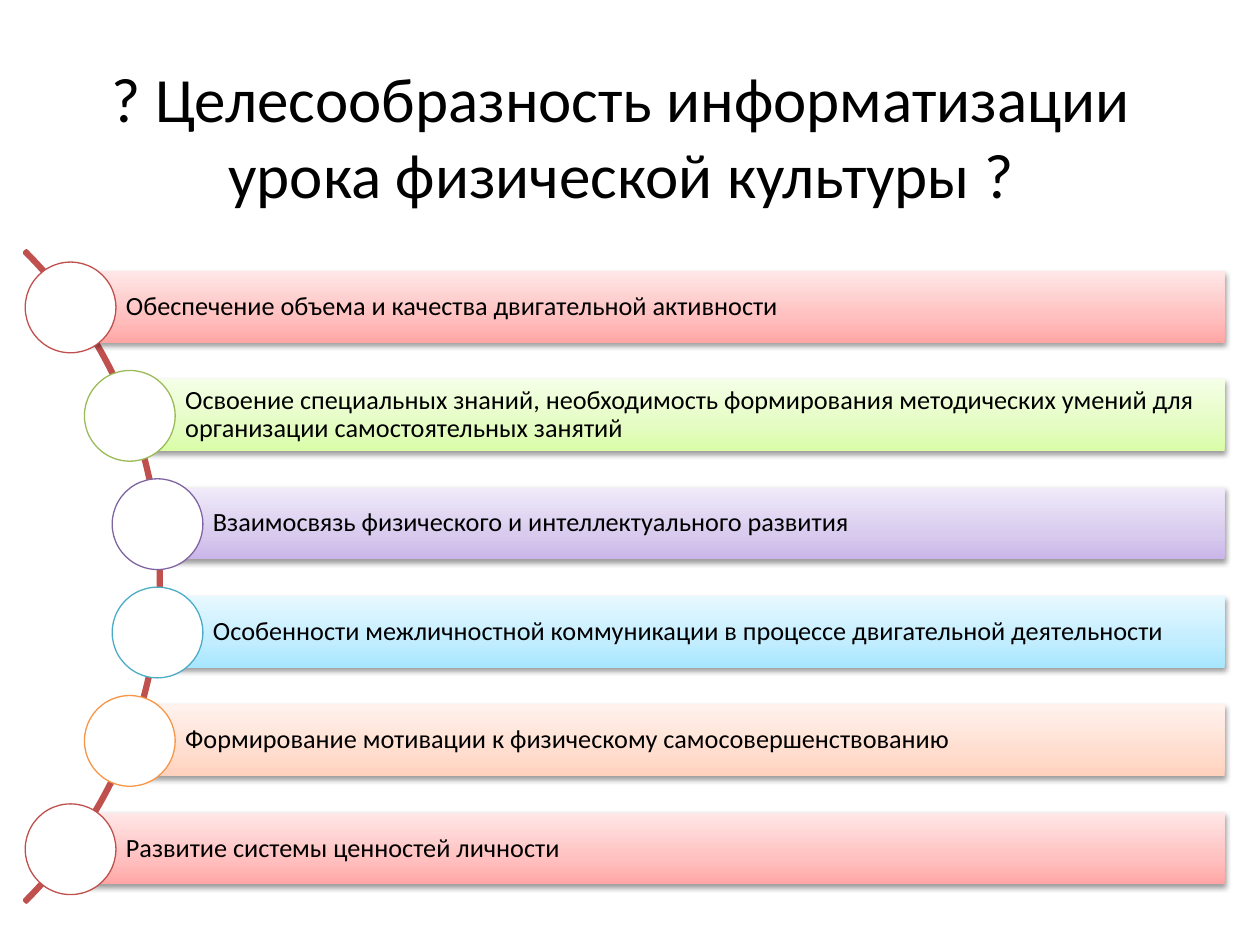
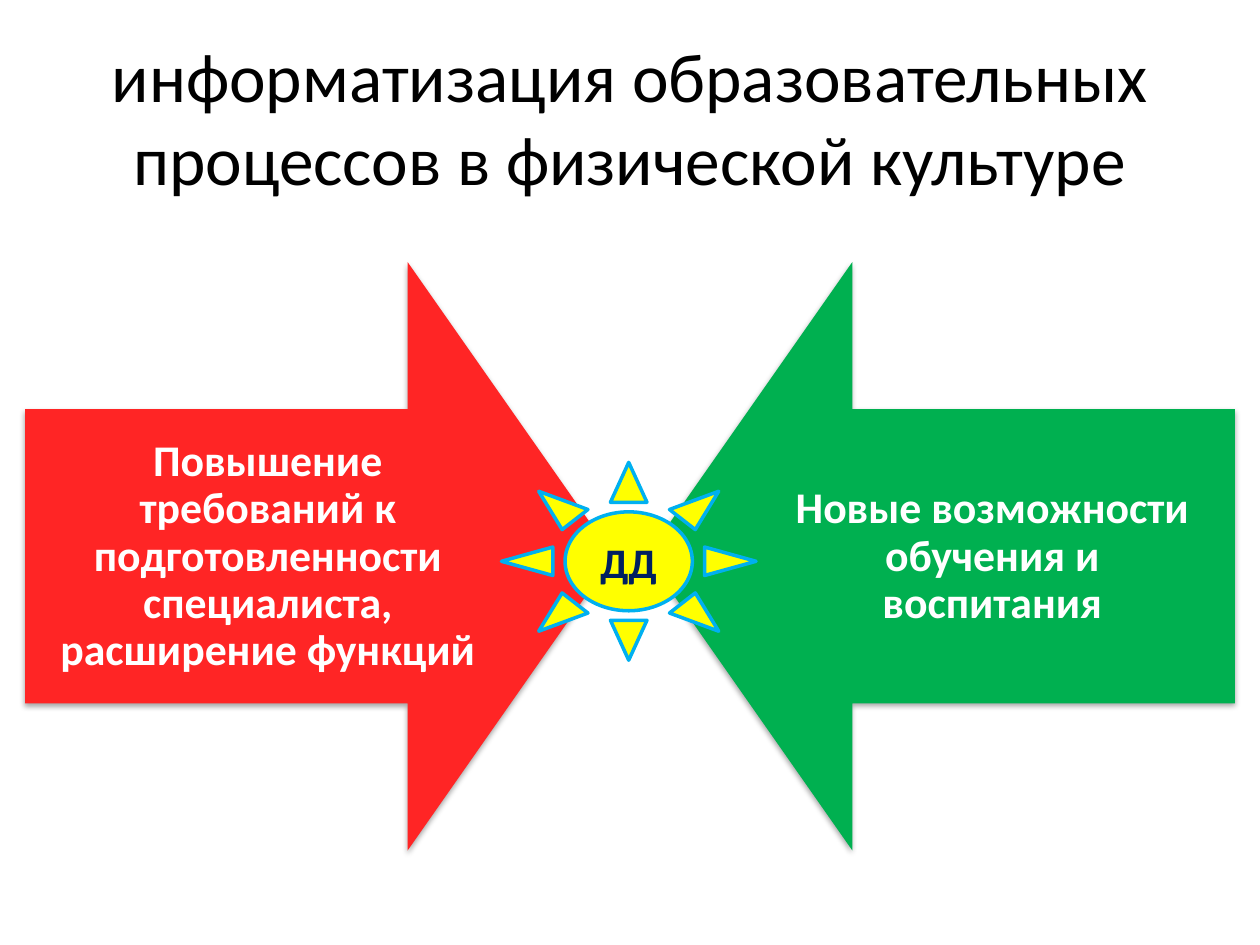
from copy import deepcopy

from lxml.etree import SubElement
from pptx import Presentation
from pptx.dml.color import RGBColor
from pptx.enum.shapes import MSO_SHAPE as Geo
from pptx.enum.text import MSO_ANCHOR as Anchor, PP_ALIGN as Align
from pptx.oxml.ns import qn
from pptx.util import Inches, Pt

FONT = "Calibri"
BLACK, WHITE = "000000", "FFFFFF"
RED = "C0504D"
ROSE = ("FFA6A5", "FFC0BF", "FFE7E7")
STOPS = (0, 0.35, 1)

GOALS = [
    ("Обеспечение объема и качества двигательной активности", RED, ROSE),
    ("Освоение специальных знаний, необходимость формирования методических "
     "умений для организации самостоятельных занятий",
     "9BBB59", ("DAFDA7", "E4FCC2", "F5FFE7")),
    ("Взаимосвязь физического и интеллектуального развития",
     "8064A2", ("C9B5E8", "D8CBEE", "F0EAF9")),
    ("Особенности межличностной коммуникации в процессе двигательной "
     "деятельности", "4BACC6", ("A7E6FF", "C1EDFF", "E7F8FF")),
    ("Формирование мотивации к физическому самосовершенствованию",
     "F79646", ("FFD2BD", "FFDED0", "FFF2ED")),
    ("Развитие системы ценностей личности", RED, ROSE),
]
LEFTS = (0.55, 1.02, 1.24)

FORCES = [
    ("Повышение требований к подготовленности специалиста, расширение функций",
     "FF2525", 270, 0.2, 0.2),
    ("Новые возможности обучения и воспитания", "00B050", 90, 5.13, 5.95),
]


def tint(code):
    return RGBColor.from_string(code)


class Deck:
    """Holds the shared style and the slide being built."""

    def __init__(self):
        self.prs = Presentation()
        self.prs.slide_width, self.prs.slide_height = Inches(10), Inches(7.5)
        self.slide = None

    def page(self, title, box, size):
        self.slide = self.prs.slides.add_slide(self.prs.slide_layouts[6])
        self.label(title, box, size, BLACK)

    def words(self, shape, text, size, color, bold=False, align=Align.CENTER,
              pads=(0.1, 0.05, 0.1, 0.05), pitch=None):
        frame = shape.text_frame
        frame.word_wrap = True
        frame.vertical_anchor = Anchor.MIDDLE
        (frame.margin_left, frame.margin_top,
         frame.margin_right, frame.margin_bottom) = map(Inches, pads)
        para = frame.paragraphs[0]
        para.alignment = align
        if pitch:
            para.line_spacing = pitch
        run = para.add_run()
        run.text = text
        font = run.font
        font.name, font.size, font.bold = FONT, Pt(size), bold
        font.color.rgb = tint(color)

    def label(self, text, box, size, color, **style):
        shape = self.slide.shapes.add_textbox(*map(Inches, box))
        self.words(shape, text, size, color, **style)

    def shape(self, geo, box, fill=None, line=None, width=0.75, adjust=()):
        shape = self.slide.shapes.add_shape(geo, *map(Inches, box))
        shape.shadow.inherit = False
        for i, value in enumerate(adjust):
            shape.adjustments[i] = value
        if fill:
            shape.fill.solid()
            shape.fill.fore_color.rgb = tint(fill)
        else:
            shape.fill.background()
        if line:
            shape.line.color.rgb = tint(line)
            shape.line.width = Pt(width)
        else:
            shape.line.fill.background()
        return shape

    def blend(self, shape, colors):
        fill = shape.fill
        fill.gradient()
        fill.gradient_angle = 90
        first = next(shape.element.iter(qn("a:gs")))
        first.addnext(deepcopy(first))
        for stop, place, color in zip(fill.gradient_stops, STOPS, colors):
            stop.position = place
            stop.color.rgb = tint(color)

    def shade(self, shape, alpha, drop):
        effects = shape.element.spPr.find(qn("a:effectLst"))
        outer = SubElement(effects, qn("a:outerShdw"), blurRad=str(Pt(3.1)),
                           dist=str(Pt(drop)), dir="5400000", rotWithShape="0")
        color = SubElement(outer, qn("a:srgbClr"), val=BLACK)
        SubElement(color, qn("a:alpha"), val=str(alpha * 1000))

    def goal(self, row, text, line, colors):
        left = LEFTS[min(row, len(GOALS) - 1 - row)]
        top = 2.15 + row * 0.86
        bar = self.shape(Geo.RECTANGLE, (left, top, 9.72 - left, 0.57))
        self.blend(bar, colors)
        self.shade(bar, 38, 1.6)
        self.words(bar, text, 15, BLACK, align=Align.LEFT,
                   pads=(0.45, 0.04, 0.04, 0.04), pitch=0.9)
        self.shape(Geo.OVAL, (left - 0.35, top - 0.07, 0.72, 0.72), WHITE, line)

    def force(self, text, fill, turn, left, inner):
        arrow = self.shape(Geo.DOWN_ARROW, (left, 2.08, 4.67, 4.67), fill,
                           adjust=(0.5, 0.35))
        arrow.rotation = turn
        self.shade(arrow, 35, 1.8)
        self.label(text, (inner, 3.25, 3.85, 2.34), 25, WHITE, bold=True,
                   pads=(0.19,) * 4, pitch=0.9)


def main():
    deck = Deck()
    deck.page("? Целесообразность информатизации урока физической культуры ?",
              (0.43, 0.21, 9, 1.73), 36)
    deck.shape(Geo.BLOCK_ARC, (-6.03, 0.92, 7.31, 7.31), line=RED, width=2,
               adjust=(189, 27, 0.003))
    for row, goal in enumerate(GOALS):
        deck.goal(row, *goal)

    deck.page("информатизация образовательных процессов в физической культуре",
              (0.5, 0.3, 9, 1.25), 39.6)
    for force in FORCES:
        deck.force(*force)
    sun = deck.shape(Geo.SUN, (3.98, 3.67, 2.02, 1.57), "FFFF00", "00B0F0", 2)
    deck.words(sun, "ДД", 24, "002060", bold=True)
    deck.prs.save("out.pptx")


if __name__ == "__main__":
    main()
